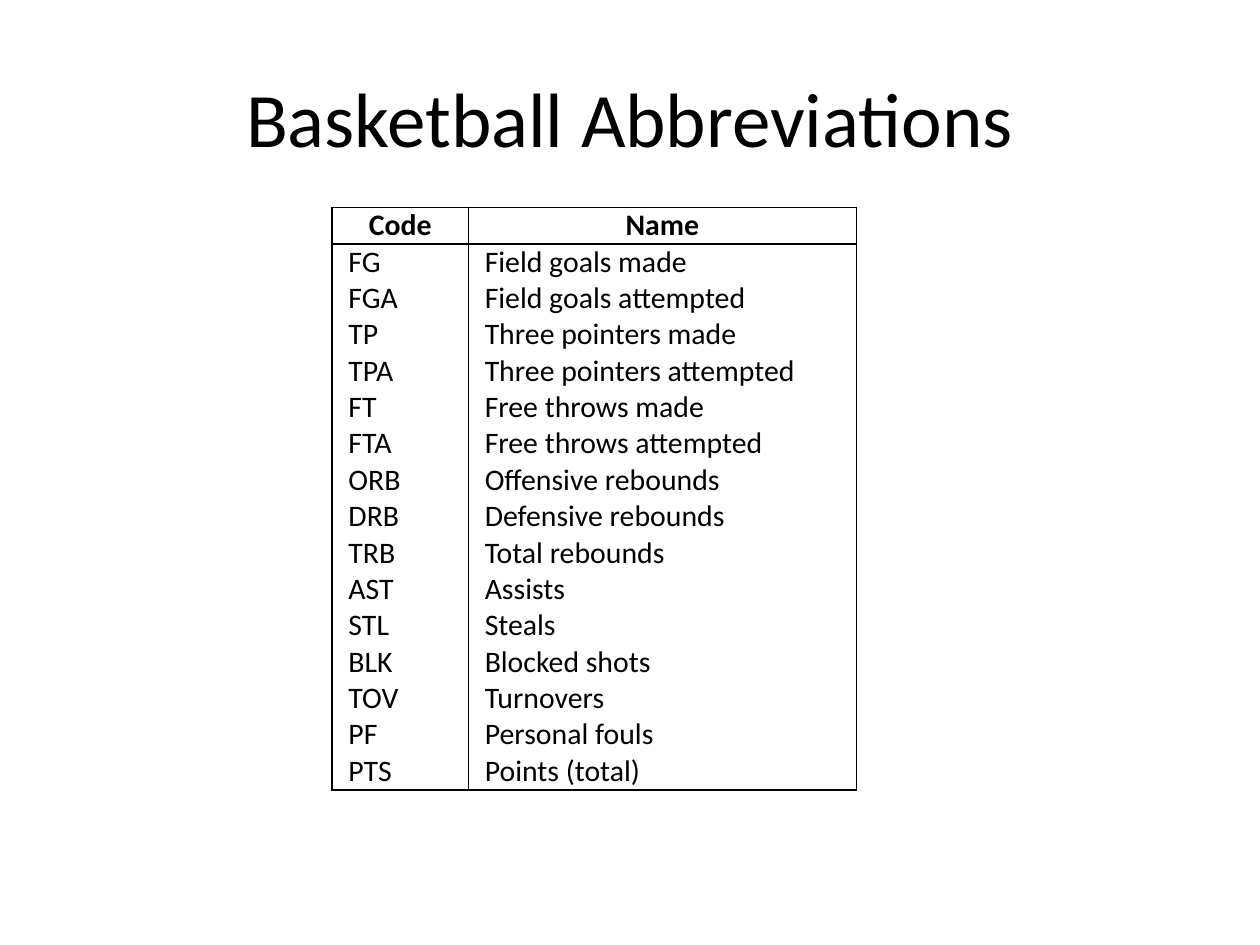
from dataclasses import dataclass
from typing import Any

from lxml.etree import SubElement as add_element
from pptx import Presentation
from pptx.dml.color import RGBColor
from pptx.enum.text import MSO_ANCHOR as Anchor, PP_ALIGN as Align
from pptx.oxml.ns import qn
from pptx.util import Inches, Pt

GRID = 100
ABBREVIATIONS = {
    "FG": "Field goals made",
    "FGA": "Field goals attempted",
    "TP": "Three pointers made",
    "TPA": "Three pointers attempted",
    "FT": "Free throws made",
    "FTA": "Free throws attempted",
    "ORB": "Offensive rebounds",
    "DRB": "Defensive rebounds",
    "TRB": "Total rebounds",
    "AST": "Assists",
    "STL": "Steals",
    "BLK": "Blocked shots",
    "TOV": "Turnovers",
    "PF": "Personal fouls",
    "PTS": "Points (total)",
}


def color(value):
    return RGBColor.from_string(value)


def write(frame, lines, *, size, font, ink, bold=False, align=Align.LEFT):
    for index, line in enumerate(lines):
        para = frame.add_paragraph() if index else frame.paragraphs[0]
        para.alignment = align
        span = para.add_run()
        span.text = line
        span.font.name = font
        span.font.size = Pt(size)
        span.font.bold = bold
        span.font.color.rgb = color(ink)


@dataclass
class SlideBuilder:
    deck: Any
    page: Any
    font: str = "Calibri"
    ink: str = "000000"
    paper: str = "FFFFFF"

    def place(self, left, top, width, height):
        wide, high = self.deck.slide_width, self.deck.slide_height
        return [round(units * full / GRID) for units, full in
                zip((left, top, width, height), (wide, high, wide, high))]

    def background(self):
        fill = self.page.background.fill
        fill.solid()
        fill.fore_color.rgb = color(self.paper)

    def title(self, text, area):
        box = self.page.shapes.add_textbox(*self.place(*area))
        frame = box.text_frame
        frame.word_wrap = True
        frame.vertical_anchor = Anchor.MIDDLE
        write(frame, [text], size=44, font=self.font, ink=self.ink, align=Align.CENTER)

    def border(self, cell, width=1):
        properties = cell._tc.get_or_add_tcPr()
        for side in ("lnL", "lnR", "lnT", "lnB"):
            line = add_element(properties, qn(f"a:{side}"), w=str(Pt(width)))
            fill = add_element(line, qn("a:solidFill"))
            add_element(fill, qn("a:srgbClr"), val=self.ink)

    def cell(self, cell, lines, **style):
        cell.margin_left = cell.margin_right = Inches(0.13)
        cell.margin_top = cell.margin_bottom = 0
        self.border(cell)
        cell.fill.background()
        write(cell.text_frame, lines, size=17, font=self.font, ink=self.ink, **style)

    def table(self, headings, columns, area, column_shares):
        place = self.place(*area)
        table = self.page.shapes.add_table(2, len(headings), *place).table
        table.first_row = table.horz_banding = False
        for column, share in zip(table.columns, column_shares):
            column.width = round(place[2] * share)
        line_counts = (1, len(columns[0]))
        for row, count in zip(table.rows, line_counts):
            row.height = round(place[3] * count / sum(line_counts))
        for index, (heading, lines) in enumerate(zip(headings, columns)):
            self.cell(table.cell(0, index), [heading], bold=True, align=Align.CENTER)
            self.cell(table.cell(1, index), lines)


def main():
    deck = Presentation()
    deck.slide_width, deck.slide_height = Inches(10), Inches(7.5)
    page = deck.slides.add_slide(deck.slide_layouts[6])
    builder = SlideBuilder(deck, page)
    builder.background()
    builder.title("Basketball Abbreviations", (5, 4, 90, 16.67))
    builder.table(
        ("Code", "Name"),
        (ABBREVIATIONS.keys(), ABBREVIATIONS.values()),
        area=(26.36, 21.95, 41.6, 61.65),
        column_shares=(0.26, 0.74),
    )
    deck.save("out.pptx")


if __name__ == "__main__":
    main()
